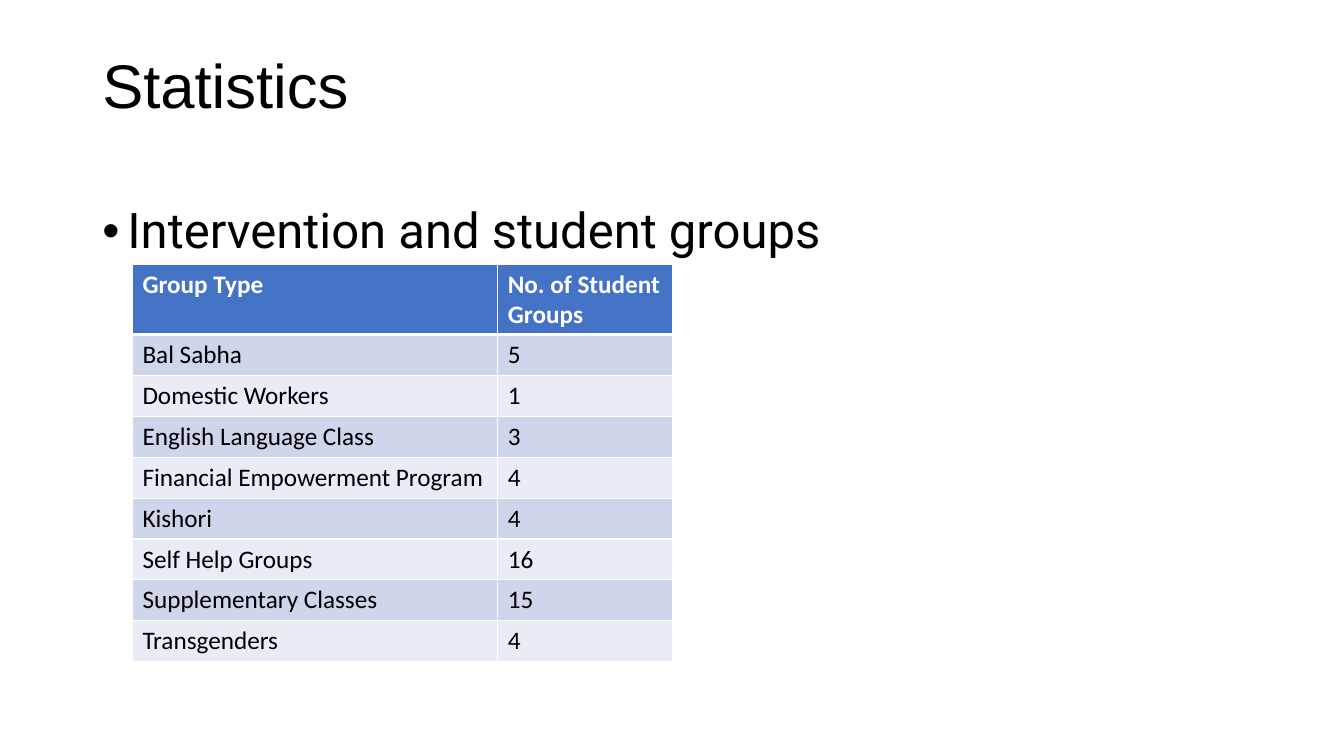
from lxml.etree import SubElement
from pptx import Presentation
from pptx.dml.color import RGBColor as RGB
from pptx.enum.text import MSO_ANCHOR as Anchor
from pptx.oxml.ns import qn
from pptx.util import Pt

WHITE = RGB(0xFF, 0xFF, 0xFF)
BLACK = RGB(0, 0, 0)
BLUE = RGB(0x44, 0x72, 0xC4)
BANDS = RGB(0xCF, 0xD5, 0xEA), RGB(0xE9, 0xEB, 0xF5)

GROUPS = [
    ("Group Type", "No. of Student Groups"),
    ("Bal Sabha", "5"),
    ("Domestic Workers", "1"),
    ("English Language Class", "3"),
    ("Financial Empowerment Program", "4"),
    ("Kishori", "4"),
    ("Self Help Groups", "16"),
    ("Supplementary Classes", "15"),
    ("Transgenders", "4"),
]


class Page:
    def __init__(self, slide):
        self.slide = slide
        self.face = "Calibri"
        self.size = 18

    def add_run(self, para, words, color=BLACK, bold=False, face=None, size=None):
        run = para.add_run()
        run.text = words
        font = run.font
        font.name = face or self.face
        font.size = Pt(size or self.size)
        font.bold = bold
        font.color.rgb = color

    def text(self, box, words, face, size, anchor=Anchor.TOP, bullet=False):
        frame = self.slide.shapes.add_textbox(*map(Pt, box)).text_frame
        frame.word_wrap = True
        frame.vertical_anchor = anchor
        para = frame.paragraphs[0]
        para.line_spacing = 0.9
        if bullet:
            props = para._p.get_or_add_pPr()
            props.set("marL", str(Pt(18)))
            props.set("indent", str(Pt(-18)))
            SubElement(props, qn("a:buFont"), typeface="Arial")
            SubElement(props, qn("a:buChar"), char="•")
        self.add_run(para, words, face=face, size=size)

    def border(self, cell, side, width):
        props = cell._tc.get_or_add_tcPr()
        line = SubElement(props, qn("a:ln" + side), w=str(Pt(width)))
        fill = SubElement(line, qn("a:solidFill"))
        SubElement(fill, qn("a:srgbClr"), val=str(WHITE))

    def table(self, left, top, widths, heights, data):
        table = self.slide.shapes.add_table(
            len(data), len(widths), Pt(left), Pt(top),
            Pt(sum(widths)), Pt(sum(heights))).table
        for col, width in zip(table.columns, widths):
            col.width = Pt(width)
        for r, (row, height) in enumerate(zip(data, heights)):
            table.rows[r].height = Pt(height)
            head = r == 0
            for c, words in enumerate(row):
                cell = table.cell(r, c)
                # Thick rule between the header and the body
                thick = {"T": 3 if r == 1 else 1, "B": 3 if head else 1}
                for side in "LRTB":
                    self.border(cell, side, thick.get(side, 1))
                cell.fill.solid()
                cell.fill.fore_color.rgb = BLUE if head else BANDS[(r - 1) % 2]
                self.add_run(cell.text_frame.paragraphs[0], words,
                             WHITE if head else BLACK, head)


def main():
    deck = Presentation()
    deck.slide_width, deck.slide_height = Pt(960), Pt(540)
    page = Page(deck.slides.add_slide(deck.slide_layouts[6]))

    # Heading and bullet
    page.text((66, 22.3, 687.6, 81.4), "Statistics", "Arial", 44, Anchor.MIDDLE)
    page.text((66, 144, 828, 342), "Intervention and student groups",
              "Roboto", 35, bullet=True)

    # Group counts
    page.table(94.6, 188.6, (261, 125), [50.4] + [29.2] * 8, GROUPS)
    deck.save("out.pptx")


if __name__ == "__main__":
    main()
